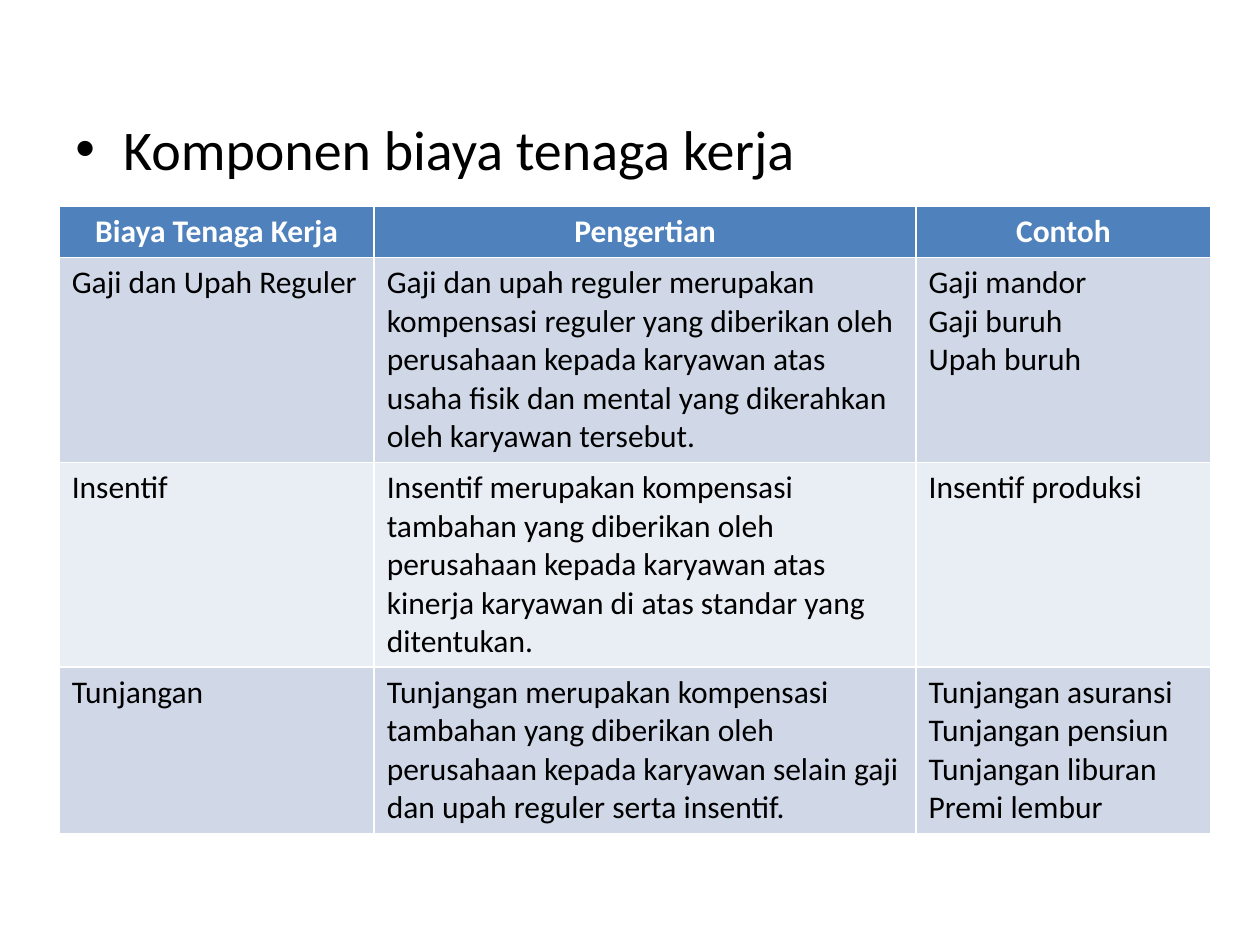
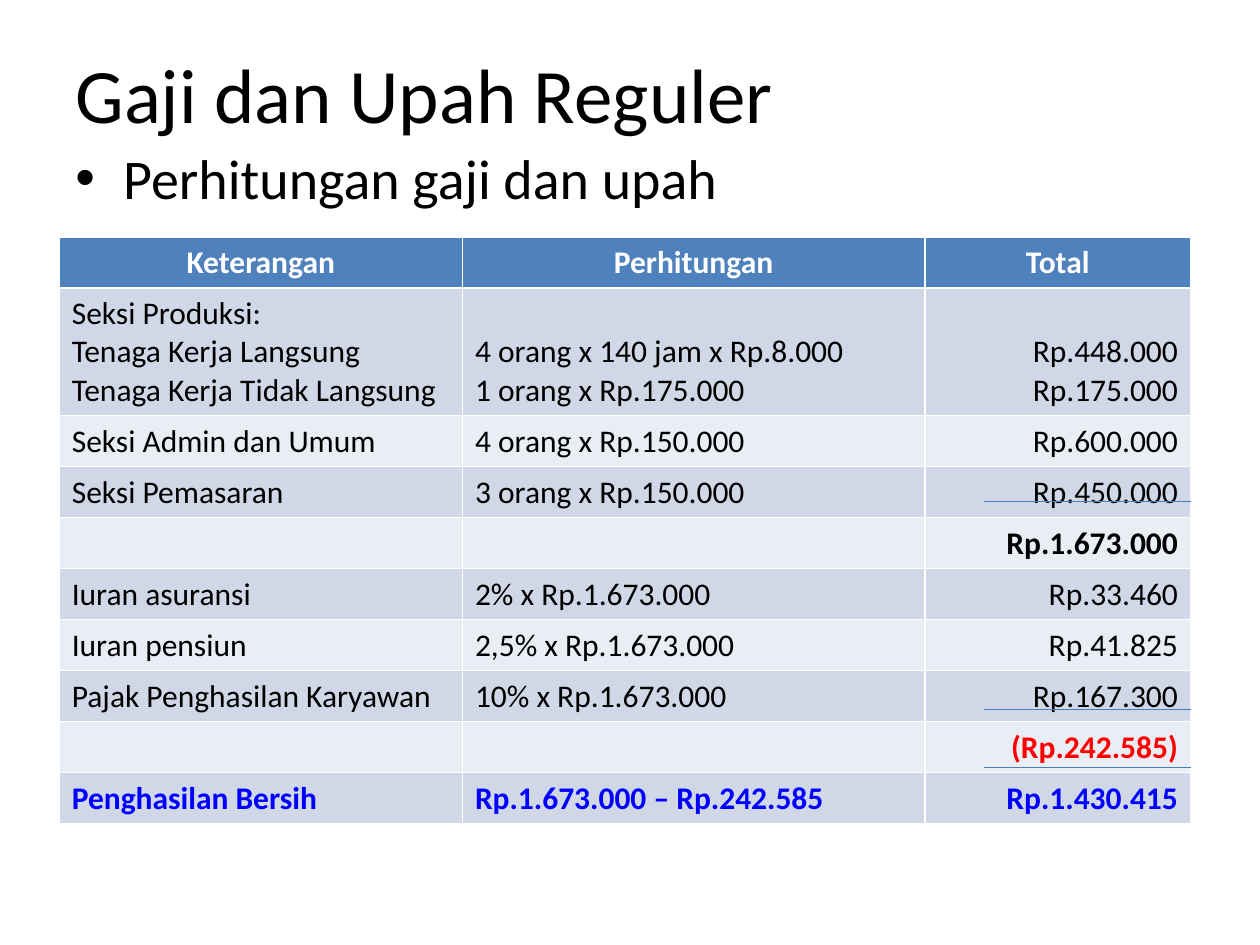
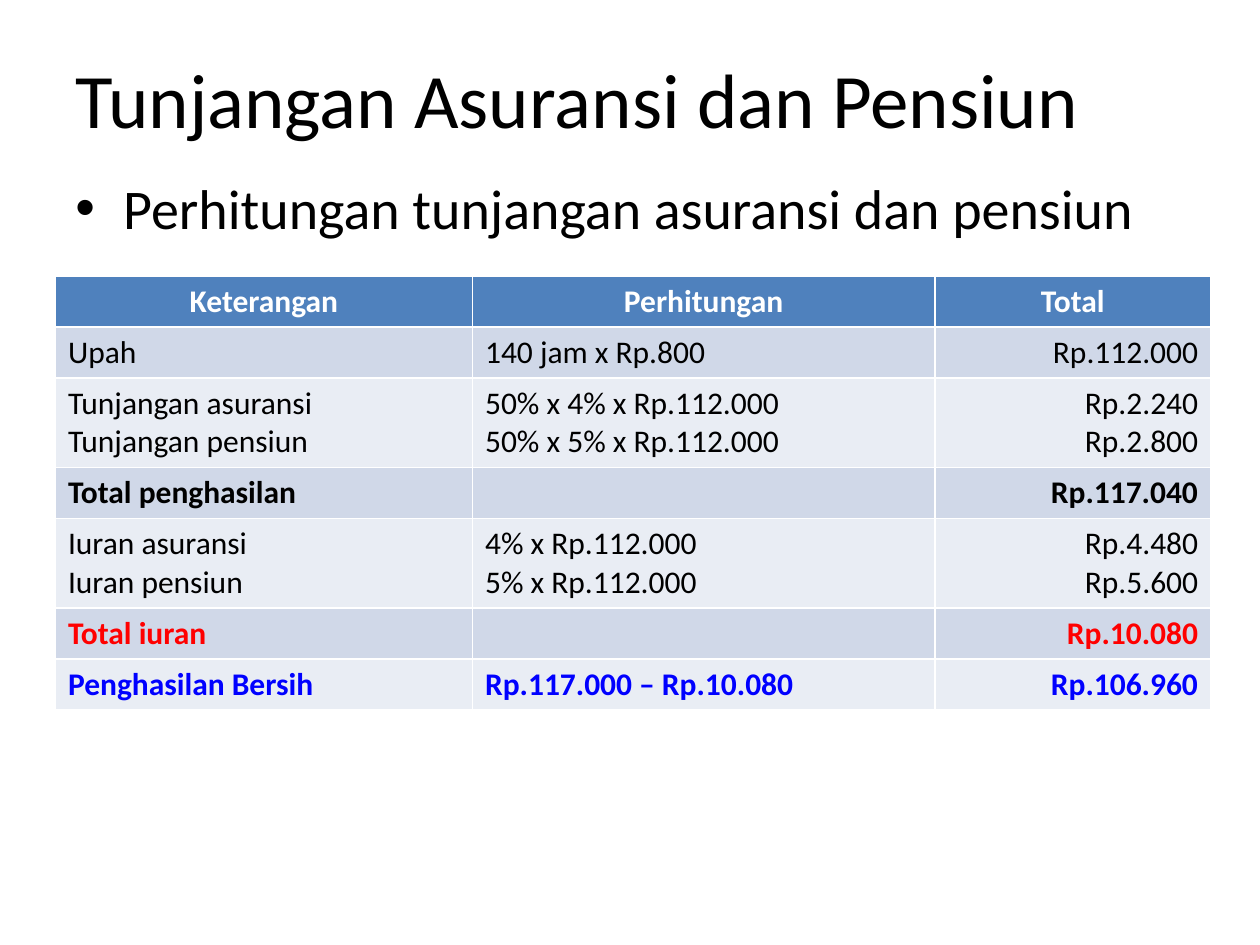
from lxml.etree import SubElement
from pptx import Presentation
from pptx.dml.color import RGBColor
from pptx.enum.shapes import MSO_CONNECTOR
from pptx.enum.text import MSO_ANCHOR, PP_ALIGN
from pptx.oxml.ns import qn
from pptx.util import Inches, Pt

FONT = "Calibri"
COLORS = {
    "text": "000000",
    "header_text": "FFFFFF",
    "header": "4F81BD",
    "band_dark": "D0D8E8",
    "band_light": "E9EDF4",
    "deduction": "FF0000",
    "net": "0000FF",
    "rule": "4B7EBC",
}
TITLE = {"size": Pt(44), "color": "text"}
BULLET = {"size": Pt(32), "color": "text"}
ROW_STYLES = {
    "header": {"size": Pt(18), "bold": True, "color": "header_text"},
    "plain": {"size": Pt(18), "bold": False, "color": "text"},
    "total": {"size": Pt(18), "bold": True, "color": "text"},
    "deduction": {"size": Pt(18), "bold": True, "color": "deduction"},
    "net": {"size": Pt(18), "bold": True, "color": "net"},
}
MARGIN, CONTENT_W, CONTENT_BOTTOM = 0.5, 9, 6.7
LINE_H, CELL_PAD = 0.305, 0.1
L, C, R = PP_ALIGN.LEFT, PP_ALIGN.CENTER, PP_ALIGN.RIGHT


def rgb(name):
    return RGBColor.from_string(COLORS[name])


def write(tf, text, style, align=L):
    """Fill a text frame, one paragraph for each line of text."""
    tf.text = text
    for p in tf.paragraphs:
        p.alignment = align
        for r in p.runs:
            r.font.name = FONT
            for name, value in style.items():
                if name == "color":
                    r.font.color.rgb = rgb(value)
                else:
                    setattr(r.font, name, value)


def add_title(s, text, top, height):
    sp = s.shapes.title
    sp.left, sp.top = Inches(MARGIN), Inches(top)
    sp.width, sp.height = Inches(CONTENT_W), Inches(height)
    sp.text_frame.vertical_anchor = MSO_ANCHOR.MIDDLE
    write(sp.text_frame, text, TITLE)


def add_bullet(s, text, top):
    sp = s.shapes.add_textbox(Inches(MARGIN), Inches(top), Inches(CONTENT_W),
                              Inches(CONTENT_BOTTOM - top))
    tf = sp.text_frame
    tf.word_wrap = True
    write(tf, text, BULLET)
    pPr = tf.paragraphs[0]._p.get_or_add_pPr()
    pPr.set("marL", str(Inches(0.38)))
    pPr.set("indent", str(-Inches(0.38)))
    SubElement(SubElement(pPr, qn("a:spcBef")), qn("a:spcPct"), val="20000")
    SubElement(pPr, qn("a:buFont"), typeface="Arial")
    SubElement(pPr, qn("a:buChar"), char="•")


def add_banded_table(s, left, top, widths, aligns, header, rows, lines=None):
    """Draw a table; rows are (style, cell texts), lines the text lines per row."""
    rows = [("header", header), *rows]
    lines = lines or [max(t.count("\n") + 1 for t in texts) for _, texts in rows]
    heights = [CELL_PAD + LINE_H * n for n in lines]
    table = s.shapes.add_table(len(rows), len(widths), Inches(left), Inches(top),
                               Inches(sum(widths)), Inches(sum(heights))).table
    for column, width in zip(table.columns, widths):
        column.width = Inches(width)
    for i, (style, texts) in enumerate(rows):
        table.rows[i].height = Inches(heights[i])
        band = "header" if i == 0 else "band_dark" if i % 2 else "band_light"
        for j, text in enumerate(texts):
            cell = table.cell(i, j)
            cell.fill.solid()
            cell.fill.fore_color.rgb = rgb(band)
            write(cell.text_frame, text, ROW_STYLES[style], aligns[j] if i else C)
    return table


def add_sum_rules(s, right, top, offsets, width=1.64):
    for offset in offsets:
        y = Inches(top + offset)
        line = s.shapes.add_connector(MSO_CONNECTOR.STRAIGHT, Inches(right - width), y,
                                      Inches(right), y)
        line.line.color.rgb = rgb("rule")
        line.line.width = Pt(0.75)
        SubElement(line._element.spPr, qn("a:effectLst"))


def build_components(prs):
    s = prs.slides.add_slide(prs.slide_layouts[6])
    add_bullet(s, "Komponen biaya tenaga kerja", 0.86)
    add_banded_table(
        s, 0.47, 1.64, (2.5, 4.3, 2.34), (L, L, L),
        ("Biaya Tenaga Kerja", "Pengertian", "Contoh"),
        [
            ("plain", ("Gaji dan Upah Reguler",
                       "Gaji dan upah reguler merupakan kompensasi reguler yang diberikan "
                       "oleh perusahaan kepada karyawan atas usaha fisik dan mental yang "
                       "dikerahkan oleh karyawan tersebut.",
                       "Gaji mandor\nGaji buruh\nUpah buruh")),
            ("plain", ("Insentif",
                       "Insentif merupakan kompensasi tambahan yang diberikan oleh "
                       "perusahaan kepada karyawan atas kinerja karyawan di atas standar "
                       "yang ditentukan.",
                       "Insentif produksi")),
            ("plain", ("Tunjangan",
                       "Tunjangan merupakan kompensasi tambahan yang diberikan oleh "
                       "perusahaan kepada karyawan selain gaji dan upah reguler serta "
                       "insentif.",
                       "Tunjangan asuransi\nTunjangan pensiun\nTunjangan liburan\n"
                       "Premi lembur")),
        ],
        lines=(1, 5, 5, 4))


def build_regular_wages(prs):
    s = prs.slides.add_slide(prs.slide_layouts[5])
    add_title(s, "Gaji dan Upah Reguler", 0.3, 0.87)
    add_bullet(s, "Perhitungan gaji dan upah", 1.09)
    left, top, widths = 0.47, 1.88, (3.2, 3.67, 2.11)
    table = add_banded_table(
        s, left, top, widths, (L, L, R), ("Keterangan", "Perhitungan", "Total"),
        [
            ("plain", ("Seksi Produksi:\nTenaga Kerja Langsung\nTenaga Kerja Tidak Langsung",
                       "4 orang x 140 jam x Rp.8.000\n1 orang x Rp.175.000",
                       "Rp.448.000\nRp.175.000")),
            ("plain", ("Seksi Admin dan Umum", "4 orang x Rp.150.000", "Rp.600.000")),
            ("plain", ("Seksi Pemasaran", "3 orang x Rp.150.000", "Rp.450.000")),
            ("total", ("", "", "Rp.1.673.000")),
            ("plain", ("Iuran asuransi", "2% x Rp.1.673.000", "Rp.33.460")),
            ("plain", ("Iuran pensiun", "2,5% x Rp.1.673.000", "Rp.41.825")),
            ("plain", ("Pajak Penghasilan Karyawan", "10% x Rp.1.673.000", "Rp.167.300")),
            ("deduction", ("", "", "(Rp.242.585)")),
            ("net", ("Penghasilan Bersih", "Rp.1.673.000 – Rp.242.585", "Rp.1.430.415")),
        ])
    for j in (1, 2):
        table.cell(1, j).vertical_anchor = MSO_ANCHOR.BOTTOM
    add_sum_rules(s, left + sum(widths), top, (2.1, 3.75, 4.21))


def build_allowances(prs):
    s = prs.slides.add_slide(prs.slide_layouts[5])
    add_title(s, "Tunjangan Asuransi dan Pensiun", 0.3, 0.95)
    add_bullet(s, "Perhitungan tunjangan asuransi dan pensiun", 1.33)
    add_banded_table(
        s, 0.44, 2.19, (3.31, 3.67, 2.19), (L, L, R),
        ("Keterangan", "Perhitungan", "Total"),
        [
            ("plain", ("Upah", "140 jam x Rp.800", "Rp.112.000")),
            ("plain", ("Tunjangan asuransi\nTunjangan pensiun",
                       "50% x 4% x Rp.112.000\n50% x 5% x Rp.112.000",
                       "Rp.2.240\nRp.2.800")),
            ("total", ("Total penghasilan", "", "Rp.117.040")),
            ("plain", ("Iuran asuransi\nIuran pensiun",
                       "4% x Rp.112.000\n5% x Rp.112.000",
                       "Rp.4.480\nRp.5.600")),
            ("deduction", ("Total iuran", "", "Rp.10.080")),
            ("net", ("Penghasilan Bersih", "Rp.117.000 – Rp.10.080", "Rp.106.960")),
        ])


def main():
    prs = Presentation()
    prs.slide_width, prs.slide_height = Inches(10), Inches(7.5)
    for build in (build_components, build_regular_wages, build_allowances):
        build(prs)
    prs.save("out.pptx")


if __name__ == "__main__":
    main()
